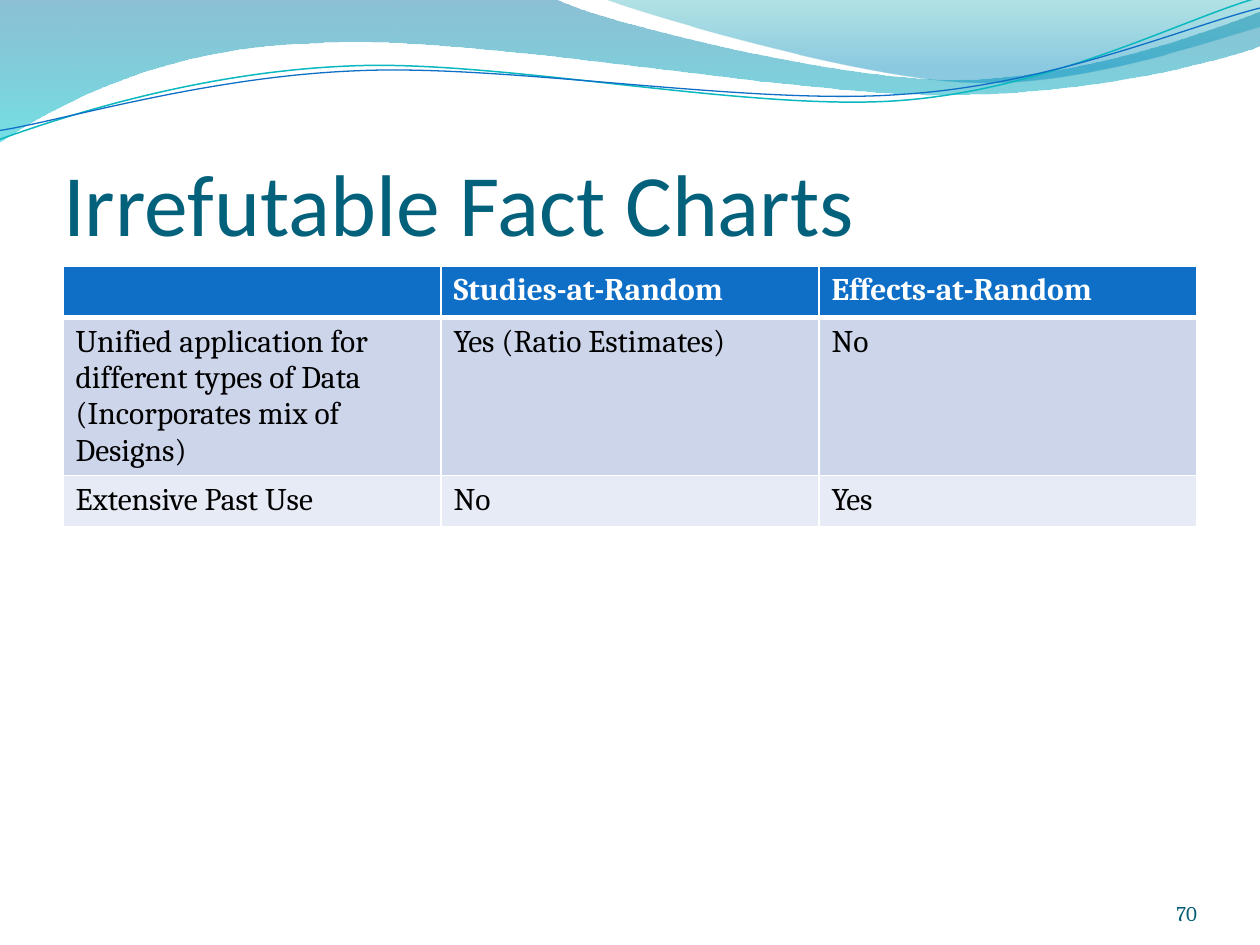
from lxml import etree
from pptx import Presentation
from pptx.dml.color import RGBColor
from pptx.enum.text import MSO_ANCHOR, PP_ALIGN
from pptx.oxml.ns import qn
from pptx.util import Inches, Pt

LEFT, RIGHT, BOTTOM = PP_ALIGN.LEFT, PP_ALIGN.RIGHT, MSO_ANCHOR.BOTTOM

WHITE = RGBColor(0xFF, 0xFF, 0xFF)
BLACK = RGBColor(0x00, 0x00, 0x00)
BLUE = RGBColor(0x0F, 0x6F, 0xC6)
TURQUOISE = RGBColor(0x0A, 0xB8, 0xBF)
TITLE_TEAL = RGBColor(0x04, 0x61, 0x7B)
NUMBER_TEAL = RGBColor(0x04, 0x5D, 0x75)
DARK_BAND = RGBColor(0xCC, 0xD5, 0xEA)
LIGHT_BAND = RGBColor(0xE7, 0xEB, 0xF5)
WAVE_BLUE = RGBColor(0x00, 0x74, 0xA1)
WAVE_CYAN = RGBColor(0x00, 0xC6, 0xCF)
CREST_TEAL = RGBColor(0x00, 0xA1, 0xA9)
CREST_BLUE = RGBColor(0x00, 0x8B, 0xBF)


def add_curve(slide, start, segments, closed):
    """Draw a path of lines (2 numbers) and Bezier curves (6 numbers), in inches."""
    builder = slide.shapes.build_freeform(Inches(start[0]), Inches(start[1]))
    ends = [(Inches(segment[-2]), Inches(segment[-1])) for segment in segments]
    builder.add_line_segments(ends, close=closed)
    shape = builder.convert_to_shape()
    shape.shadow.inherit = False
    lines = list(shape._element.spPr.iter(qn("a:lnTo")))
    for line, segment in zip(lines, segments):
        if len(segment) == 6:
            curve = etree.Element(qn("a:cubicBezTo"))
            for x, y in zip(segment[::2], segment[1::2]):
                etree.SubElement(curve, qn("a:pt"), x=str(Inches(x) - shape.left),
                                 y=str(Inches(y) - shape.top))
            line.getparent().replace(line, curve)
    return shape


def format_text(text_frame, font_name, size, color, alignment=LEFT, bold=False):
    for paragraph in text_frame.paragraphs:
        paragraph.alignment = alignment
        for run in paragraph.runs:
            run.font.name = font_name
            run.font.size = Pt(size)
            run.font.bold = bold
            run.font.color.rgb = color


presentation = Presentation()
presentation.slide_width = Inches(10)
presentation.slide_height = Inches(7.5)
slide = presentation.slides.add_slide(presentation.slide_layouts[5])

# Translucent waves: start, segments, gradient stops (position, colour, opacity %)
waves = [
    ((0, 0),
     [(4.4, -0.01), (4.76, 0.17, 6.64, 0.63, 7.58, 0.63),
      (8.53, 0.63, 9.58, 0.26, 10, 0.09), (10.01, 0.36),
      (9.83, 0.44, 8.7, 0.76, 7.46, 0.75), (6.22, 0.75, 3.82, 0.28, 2.57, 0.34),
      (1.29, 0.36, 0.46, 0.83, -0.01, 1.13)],
     [(0, WAVE_BLUE, 45), (1, WAVE_CYAN, 55)]),
    ((4.79, -0.01),
     [(5.09, 0.11, 6.82, 0.62, 7.69, 0.65), (8.56, 0.69, 9.61, 0.32, 10, 0.21),
      (10, 0), (4.79, -0.01)],
     [(0, CREST_TEAL, 30), (0.8, CREST_BLUE, 45)]),
]
for start, segments, stops in waves:
    wave = add_curve(slide, start, segments, closed=True)
    wave.line.fill.background()
    wave.fill.gradient()
    wave.fill.gradient_angle = 270
    for stop, (position, color, _) in zip(wave.fill.gradient_stops, stops):
        stop.position = position
        stop.color.rgb = color
    color_elements = wave._element.spPr.iter(qn("a:srgbClr"))
    for color_element, (_, _, opacity) in zip(color_elements, stops):
        etree.SubElement(color_element, qn("a:alpha"), val=str(opacity * 1000))

# Thin lines along the waves, tilted slightly
wave_lines = [
    ((-0.02, 0.87),
     [(0.47, 0.72, 1.58, 0.41, 2.78, 0.42), (3.96, 0.42, 5.91, 0.93, 7.12, 0.9),
      (8.32, 0.87, 9.4, 0.36, 10, 0.22)], TURQUOISE, 0.85),
    ((-0.02, 0.8),
     [(0.46, 0.75, 1.64, 0.45, 2.83, 0.46), (4.03, 0.46, 5.96, 0.89, 7.16, 0.85),
      (8.35, 0.83, 9.42, 0.42, 10.02, 0.3)], BLUE, 0.75),
]
for start, segments, color, width in wave_lines:
    wave_line = add_curve(slide, start, segments, closed=False)
    wave_line.rotation = 357.3
    wave_line.fill.background()
    wave_line.line.color.rgb = color
    wave_line.line.width = Pt(width)

# Title, in front of the waves
title = slide.shapes.title
slide.shapes._spTree.append(title._element)
title.left, title.top, title.width, title.height = (
    Inches(0.5), Inches(0.77), Inches(9), Inches(1.25))
frame = title.text_frame
frame.text = "Irrefutable Fact Charts"
frame.vertical_anchor = BOTTOM
frame.margin_left = frame.margin_right = frame.margin_bottom = 0
frame.margin_top = Inches(0.05)
format_text(frame, "Calibri", 50, TITLE_TEAL)

# Comparison table; the middle row grows with its text
rows = [
    ["", "Studies-at-Random", "Effects-at-Random"],
    ["Unified application for different types of Data\n(Incorporates mix of Designs)",
     "Yes (Ratio Estimates)", "No"],
    ["Extensive Past Use", "No", "Yes"],
]
row_fills = [BLUE, DARK_BAND, LIGHT_BAND]
table_shape = slide.shapes.add_table(
    len(rows), 3, Inches(0.5), Inches(2.11), Inches(9), Inches(2.11))
table = table_shape.table
for row_index, row in enumerate(rows):
    table.rows[row_index].height = Inches(0.41)
    is_header = row_index == 0
    for column_index, text in enumerate(row):
        cell = table.cell(row_index, column_index)
        cell.text_frame.text = text
        format_text(cell.text_frame, "Cambria", 18,
                    WHITE if is_header else BLACK, bold=is_header)
        properties = cell._tc.get_or_add_tcPr()
        top_width = 3 if row_index == 1 else 1
        bottom_width = 3 if is_header else 1
        for side, width in (("L", 1), ("R", 1), ("T", top_width), ("B", bottom_width)):
            border = etree.SubElement(properties, qn(f"a:ln{side}"), w=str(Pt(width)))
            border_fill = etree.SubElement(border, qn("a:solidFill"))
            etree.SubElement(border_fill, qn("a:srgbClr"), val=str(WHITE))
        cell.fill.solid()
        cell.fill.fore_color.rgb = row_fills[row_index]
table_shape.height = Inches(2.11)

# Slide number
number_box = slide.shapes.add_textbox(Inches(8.67), Inches(6.95), Inches(0.83), Inches(0.4))
frame = number_box.text_frame
frame.text = "70"
frame.word_wrap = True
frame.vertical_anchor = BOTTOM
frame.margin_left = frame.margin_right = frame.margin_top = frame.margin_bottom = 0
format_text(frame, "Cambria", 12, NUMBER_TEAL, RIGHT)

presentation.save("out.pptx")
